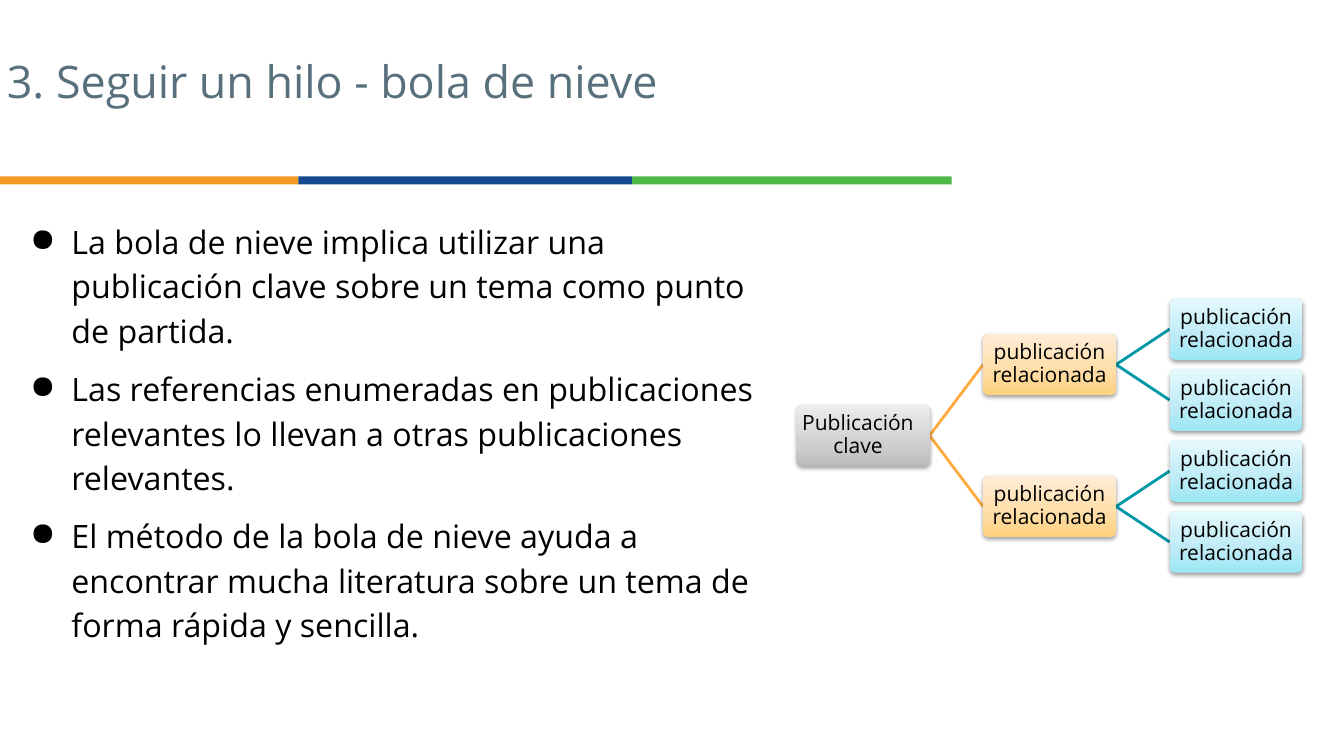
"""Builds the slide on snowball searching, with a tree of publications."""
from lxml.etree import SubElement
from pptx import Presentation
from pptx.dml.color import RGBColor
from pptx.enum.shapes import MSO_CONNECTOR as CONNECTOR, MSO_SHAPE as SHAPE
from pptx.enum.text import MSO_ANCHOR as ANCHOR, PP_ALIGN as ALIGN
from pptx.oxml import parse_xml
from pptx.oxml.ns import nsdecls, qn
from pptx.util import Inches, Pt

COLORS = {
    "title": "586F7C", "text": "000000",
    "orange": "F49925", "blue": "154A90", "green": "4EB748",
    "branch": "FFAA3F", "twig": "0097A7",
}
GRADIENTS = {
    "key": ("BBBBBB", "CFCFCF", "EDEDED"),
    "related": ("FFD17D", "FFDCA3", "FFEDD8"),
    "leaf": ("9CE7F5", "BBEAF6", "E4F9FC"),
}
STOPS = (0, 35000, 100000)
CARD_WIDTH, CARD_HEIGHT = 1.32, 0.61
COLUMNS = [7.9 + 1.85 * level for level in range(3)]
LEAF_TOPS = [2.96 + 0.704 * row for row in range(4)]
BULLETS = [
    "La bola de nieve implica utilizar una publicación clave sobre un tema como punto de partida.",
    "Las referencias enumeradas en publicaciones relevantes lo llevan a otras publicaciones relevantes.",
    "El método de la bola de nieve ayuda a encontrar mucha literatura sobre un tema de forma rápida y sencilla.",
]


class SlideBuilder:
    """Holds the text style and the current slide."""

    def __init__(self, page, font="Open Sans"):
        self.page = page
        self.font = font

    def style(self, para, size, color, spacing):
        para.line_spacing = spacing
        para.font.name = self.font
        para.font.size = Pt(size)
        para.font.color.rgb = RGBColor.from_string(COLORS[color])

    def text_box(self, left, top, width, height):
        box = self.page.shapes.add_textbox(*map(Inches, (left, top, width, height)))
        box.text_frame.word_wrap = True
        return box.text_frame

    def title(self, text):
        frame = self.text_box(-0.03, 0.24, 10.51, 1.18)
        frame.vertical_anchor = ANCHOR.MIDDLE
        frame.text = text
        self.style(frame.paragraphs[0], 32, "title", 0.9)

    def bullets(self, lines):
        frame = self.text_box(0.11, 2.1, 7.52, 4.88)
        frame.text = "\n".join(lines)
        for index, para in enumerate(frame.paragraphs):
            properties = para._p.get_or_add_pPr()
            properties.set("marL", str(Inches(0.5)))
            properties.set("indent", str(Inches(-0.41)))
            bullet_color = SubElement(properties, qn("a:buClr"))
            SubElement(bullet_color, qn("a:srgbClr"), val=COLORS["text"])
            SubElement(properties, qn("a:buChar"), char="●")
            self.style(para, 23, "text", 1.15)
            para.space_before = Pt(10 if index else 0)

    def bar(self, left, width, color):
        bar = self.page.shapes.add_shape(
            SHAPE.RECTANGLE, Inches(left), Inches(1.75), Inches(width), Inches(0.08))
        bar.shadow.inherit = False
        bar.fill.solid()
        bar.fill.fore_color.rgb = RGBColor.from_string(COLORS[color])
        bar.line.fill.background()

    def card(self, left, top, text, gradient, right_inset=0.03):
        card = self.page.shapes.add_shape(
            SHAPE.ROUNDED_RECTANGLE, Inches(left), Inches(top),
            Inches(CARD_WIDTH), Inches(CARD_HEIGHT))
        card.adjustments[0] = 0.1
        stops = "".join(
            f'<a:gs pos="{position}"><a:srgbClr val="{color}"/></a:gs>'
            for position, color in zip(STOPS, GRADIENTS[gradient]))
        properties = card._element.spPr
        properties.append(parse_xml(
            f'<a:gradFill {nsdecls("a")}><a:gsLst>{stops}</a:gsLst>'
            '<a:lin ang="16200000" scaled="0"/></a:gradFill>'))
        card.line.fill.background()
        properties.append(parse_xml(
            f'<a:effectLst {nsdecls("a")}><a:outerShdw blurRad="40000" dist="20000" '
            'dir="5400000" rotWithShape="0"><a:srgbClr val="000000">'
            '<a:alpha val="36000"/></a:srgbClr></a:outerShdw></a:effectLst>'))
        frame = card.text_frame
        frame.word_wrap = True
        frame.vertical_anchor = ANCHOR.MIDDLE
        frame.margin_left, frame.margin_right = Inches(0.03), Inches(right_inset)
        frame.margin_top = frame.margin_bottom = Inches(0.03)
        frame.text = text
        for para in frame.paragraphs:
            para.alignment = ALIGN.CENTER
            self.style(para, 15, "text", 0.9)

    def link(self, level, parent_top, child_top, color):
        middle = CARD_HEIGHT / 2
        line = self.page.shapes.add_connector(
            CONNECTOR.STRAIGHT,
            Inches(COLUMNS[level] + CARD_WIDTH), Inches(parent_top + middle),
            Inches(COLUMNS[level + 1]), Inches(child_top + middle))
        line.line.color.rgb = RGBColor.from_string(COLORS[color])
        line.line.width = Pt(2)
        SubElement(line._element.spPr, qn("a:effectLst"))

    def tree(self):
        related_tops = [sum(LEAF_TOPS[i:i + 2]) / 2 for i in (0, 2)]
        key_top = sum(related_tops) / 2
        for top in related_tops:
            self.link(0, key_top, top, "branch")
        for row, top in enumerate(LEAF_TOPS):
            self.link(1, related_tops[row // 2], top, "twig")
        self.card(COLUMNS[0], key_top, "Publicación\nclave", "key", 0.13)
        for top in related_tops:
            self.card(COLUMNS[1], top, "publicación relacionada", "related")
        for top in LEAF_TOPS:
            self.card(COLUMNS[2], top, "publicación relacionada", "leaf")


def main():
    deck = Presentation()
    deck.slide_width, deck.slide_height = Inches(13.33), Inches(7.5)
    builder = SlideBuilder(deck.slides.add_slide(deck.slide_layouts[6]))
    for left, width, color in ((0, 2.96, "orange"), (2.96, 3.31, "blue"), (6.27, 3.17, "green")):
        builder.bar(left, width, color)
    builder.title("3. Seguir un hilo - bola de nieve")
    builder.bullets(BULLETS)
    builder.tree()
    deck.save("out.pptx")


if __name__ == "__main__":
    main()
